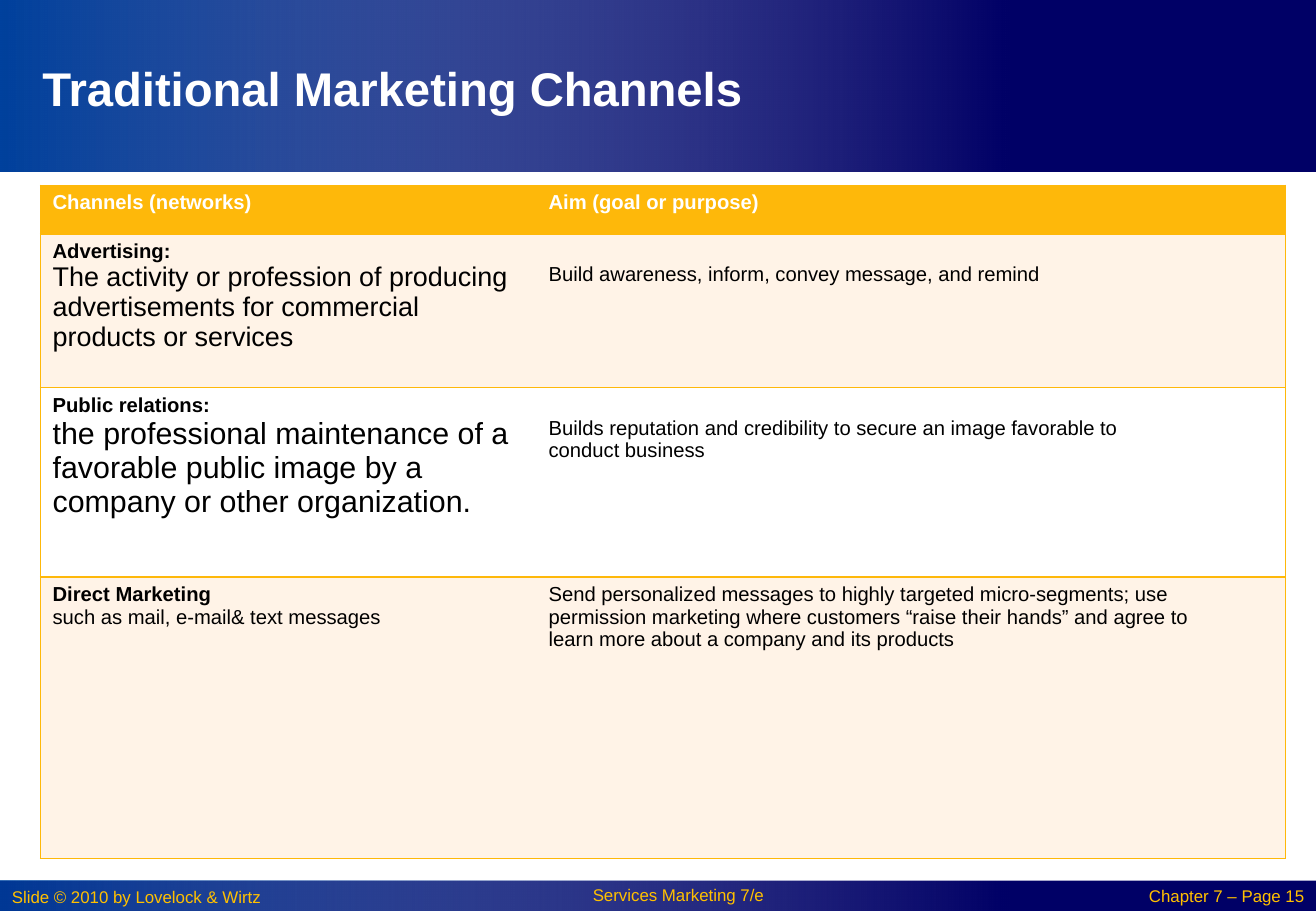
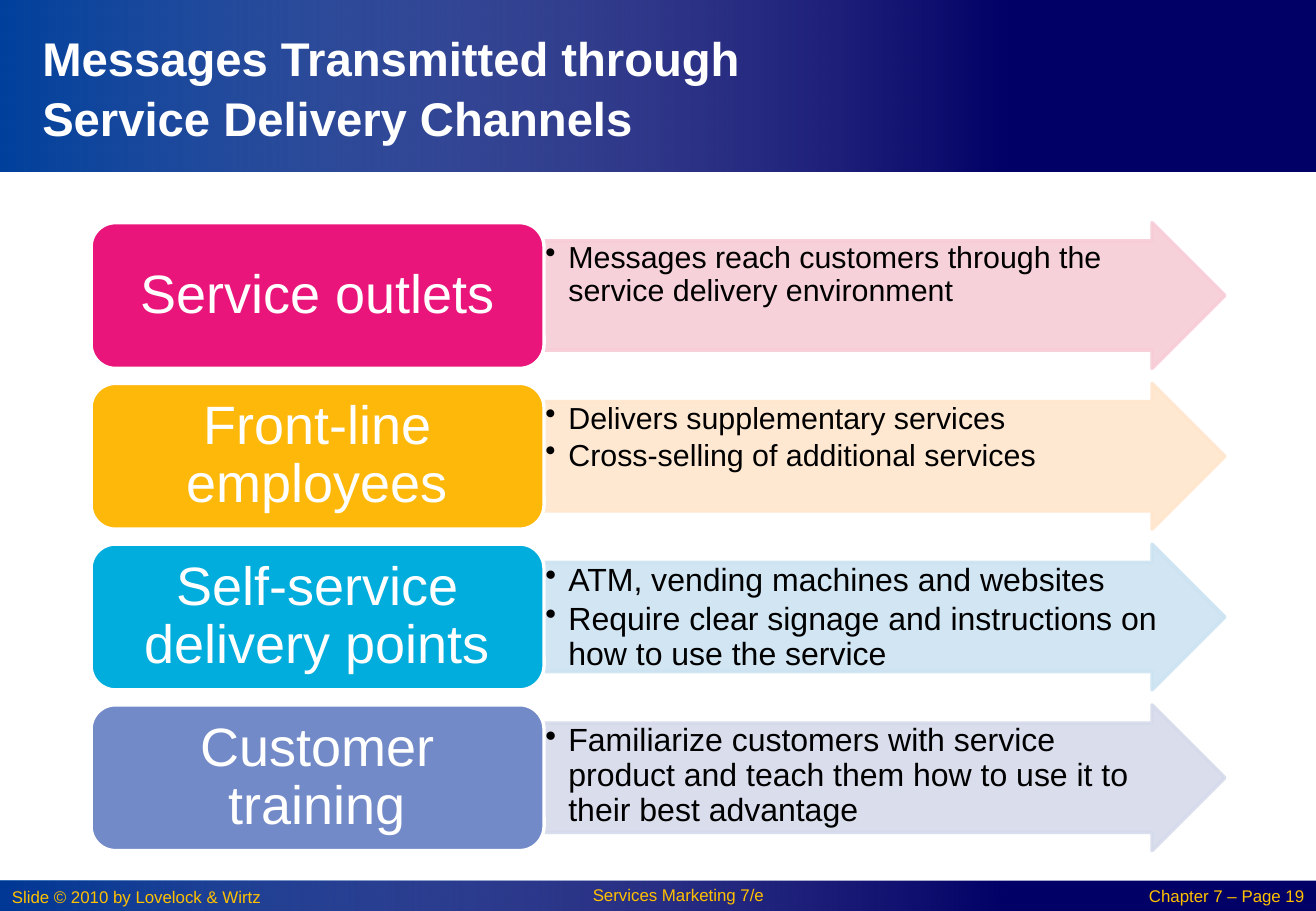
from dataclasses import dataclass

from lxml import etree
from pptx import Presentation
from pptx.dml.color import RGBColor
from pptx.enum.shapes import MSO_SHAPE
from pptx.enum.text import MSO_ANCHOR, PP_ALIGN
from pptx.oxml.ns import qn
from pptx.presentation import Presentation as Deck
from pptx.shapes.autoshape import Shape
from pptx.slide import Slide
from pptx.table import _Cell as Cell
from pptx.text.text import TextFrame
from pptx.util import Inches, Length, Pt

RECTANGLE = MSO_SHAPE.RECTANGLE
ROUNDED = MSO_SHAPE.ROUNDED_RECTANGLE
ARROW = MSO_SHAPE.RIGHT_ARROW
LEFT, CENTER, RIGHT = PP_ALIGN.LEFT, PP_ALIGN.CENTER, PP_ALIGN.RIGHT
TOP, MIDDLE = MSO_ANCHOR.TOP, MSO_ANCHOR.MIDDLE

FONT = "Arial"
NAVY, BLUE, WHITE, BLACK = "000066", "0152AB", "FFFFFF", "000000"
GOLD, FOOTER_GOLD, CREAM = "FEB80A", "FFC000", "FFF3E7"

SLIDE_COLUMNS, SLIDE_ROWS = 130, 90
GLOW_COLUMNS = 100
HEADER_ROWS, FOOTER_ROWS = 17, 3
FOOTER_TOP = SLIDE_ROWS - FOOTER_ROWS


@dataclass(frozen=True)
class Area:
    column: float
    row: float
    columns: float
    rows: float

    def lengths(self) -> list[Length]:
        return [grid(value) for value in (self.column, self.row, self.columns, self.rows)]


@dataclass(frozen=True)
class Line:
    text: str
    size: float = 12
    bold: bool = False
    color: str = BLACK
    align: PP_ALIGN = LEFT
    spacing: float = 1.0
    after: float = 0
    bullet: bool = False


@dataclass(frozen=True)
class ChannelRow:
    rows: float
    fill: str
    channel: list[Line]
    aim: Line
    aim_margin: float = 0.05


@dataclass(frozen=True)
class Message:
    label: str
    color: str
    tint: str
    size: float
    points: list[str]


TITLE_AREA = Area(3, 3, 84, 11)
TABLE_COLUMNS = (49, 66, 8)
TABLE_LEFT, TABLE_TOP = 4, 18.3
CHANNEL_ROWS = [
    ChannelRow(4.7, GOLD, [Line("Channels (networks)", bold=True, color=WHITE)],
               Line("Aim (goal or purpose)", bold=True, color=WHITE)),
    ChannelRow(15.2, CREAM, [
        Line("Advertising:", bold=True),
        Line("The activity or profession of producing advertisements for "
             "commercial products or services", 16),
    ], Line("Build awareness, inform, convey message, and remind"), 0.24),
    ChannelRow(18.7, WHITE, [
        Line("Public relations:", bold=True),
        Line("the professional maintenance of a favorable public image by a "
             "company or other organization.", 18),
    ], Line("Builds reputation and credibility to secure an image favorable to "
            "conduct business"), 0.24),
    ChannelRow(27.8, CREAM, [
        Line("Direct Marketing", bold=True),
        Line("such as mail, e-mail& text messages"),
    ], Line("Send personalized messages to highly targeted micro-segments; use "
            "permission marketing where customers “raise their hands” and agree "
            "to learn more about a company and its products")),
]

BOX_LEFT, BOX_COLUMNS, ARROW_COLUMNS = 9, 44.75, 67.25
MESSAGE_TOP, MESSAGE_ROWS, MESSAGE_PITCH = 22, 14.4, 15.88
MESSAGES = [
    Message("Service outlets", "EA157A", "F7CCD7", 18,
            ["Messages reach customers through the service delivery environment"]),
    Message("Front-line employees", GOLD, "FFE6CC", 18,
            ["Delivers supplementary services", "Cross-selling of additional services"]),
    Message("Self-service delivery points", "00ADDC", "CCE3F2", 19,
            ["ATM, vending machines and websites",
             "Require clear signage and instructions on how to use the service"]),
    Message("Customer training", "738AC8", "D5DAEB", 19,
            ["Familiarize customers with service product and teach them how to "
             "use it to their best advantage"]),
]


def grid(units: float) -> Length:
    return Inches(units / 12)


def rgb(value: str) -> RGBColor:
    return RGBColor.from_string(value)


def set_opacity(shape: Shape, *percents: int) -> None:
    for color, percent in zip(shape.element.iter(qn("a:srgbClr")), percents):
        etree.SubElement(color, qn("a:alpha"), val=str(percent * 1000))


def write(frame: TextFrame, lines: list[Line]) -> None:
    frame.word_wrap = True
    for index, line in enumerate(lines):
        paragraph = frame.add_paragraph() if index else frame.paragraphs[0]
        paragraph.text = line.text
        if line.bullet:
            properties = paragraph._p.get_or_add_pPr()
            properties.set("marL", str(Inches(0.19)))
            properties.set("indent", str(-Inches(0.19)))
            etree.SubElement(properties, qn("a:buChar"), char="•")
        paragraph.alignment = line.align
        paragraph.line_spacing = line.spacing
        paragraph.space_after = Pt(line.after)
        paragraph.font.name = FONT
        paragraph.font.size = Pt(line.size)
        paragraph.font.bold = line.bold
        paragraph.font.color.rgb = rgb(line.color)


def set_margins(frame: TextFrame, side: float, end: float) -> None:
    frame.margin_left = frame.margin_right = Inches(side)
    frame.margin_top = frame.margin_bottom = Inches(end)


def add_text(slide: Slide, area: Area, line: Line, anchor: MSO_ANCHOR = TOP) -> None:
    frame = slide.shapes.add_textbox(*area.lengths()).text_frame
    frame.vertical_anchor = anchor
    write(frame, [line])


def add_filled(slide: Slide, kind: MSO_SHAPE, area: Area, fill: str,
               outline: str | None = None) -> Shape:
    shape = slide.shapes.add_shape(kind, *area.lengths())
    shape.shadow.inherit = False
    shape.fill.solid()
    shape.fill.fore_color.rgb = rgb(fill)
    if outline:
        shape.line.color.rgb = rgb(outline)
        shape.line.width = Pt(2)
    else:
        shape.line.fill.background()
    return shape


def add_band(slide: Slide, row: float, rows: float, opacity: int) -> None:
    add_filled(slide, RECTANGLE, Area(0, row, SLIDE_COLUMNS, rows), NAVY)
    glow = add_filled(slide, RECTANGLE, Area(0, row, GLOW_COLUMNS, rows), BLUE)
    glow.fill.gradient()
    glow.fill.gradient_angle = 0
    for stop, color, position in zip(glow.fill.gradient_stops, (BLUE, WHITE), (0, 1)):
        stop.color.rgb = rgb(color)
        stop.position = position
    set_opacity(glow, opacity, 0)


def add_framed_slide(presentation: Deck, title: str, page: int) -> Slide:
    slide = presentation.slides.add_slide(presentation.slide_layouts[6])
    add_band(slide, FOOTER_TOP, FOOTER_ROWS, 69)
    add_band(slide, 0, HEADER_ROWS, 80)
    footers = [
        (Area(0, FOOTER_TOP, 31, 3.3), "Slide © 2010 by Lovelock & Wirtz", LEFT, 1.0),
        (Area(51, FOOTER_TOP, 32, 3), "Services Marketing 7/e", CENTER, 0.9),
        (Area(109, FOOTER_TOP + 0.1, 21, 3), f"Chapter 7 – Page {page}", RIGHT, 0.9),
    ]
    for area, text, align, spacing in footers:
        add_text(slide, area, Line(text, 10, color=FOOTER_GOLD, align=align, spacing=spacing))
    add_text(slide, TITLE_AREA, Line(title, 28, True, WHITE, spacing=1.05), MIDDLE)
    return slide


def set_borders(cell: Cell, visible: set[str]) -> None:
    properties = cell._tc.get_or_add_tcPr()
    for index, side in enumerate(("lnL", "lnR", "lnT", "lnB")):
        border = etree.Element(qn(f"a:{side}"), w=str(Pt(1)))
        if side in visible:
            fill = etree.SubElement(border, qn("a:solidFill"))
            etree.SubElement(fill, qn("a:srgbClr"), val=GOLD)
        else:
            etree.SubElement(border, qn("a:noFill"))
        properties.insert(index, border)


def add_channel_table(slide: Slide) -> None:
    area = Area(TABLE_LEFT, TABLE_TOP, sum(TABLE_COLUMNS),
                sum(row.rows for row in CHANNEL_ROWS))
    table = slide.shapes.add_table(
        len(CHANNEL_ROWS), len(TABLE_COLUMNS), *area.lengths()).table
    table.first_row = table.horz_banding = False
    for column, columns in zip(table.columns, TABLE_COLUMNS):
        column.width = grid(columns)
    outer_sides = ({"lnL"}, set(), {"lnR"})
    for index, row in enumerate(CHANNEL_ROWS):
        table.rows[index].height = grid(row.rows)
        cells = list(table.rows[index].cells)
        for cell, sides in zip(cells, outer_sides):
            cell.fill.solid()
            cell.fill.fore_color.rgb = rgb(row.fill)
            set_borders(cell, sides | {"lnT", "lnB"})
        write(cells[0].text_frame, row.channel)
        write(cells[1].text_frame, [row.aim])
        cells[1].margin_top = Inches(row.aim_margin)


def add_message(slide: Slide, message: Message, row: float) -> None:
    arrow = add_filled(slide, ARROW,
                       Area(BOX_LEFT + BOX_COLUMNS, row, ARROW_COLUMNS, MESSAGE_ROWS),
                       message.tint, message.tint)
    arrow.adjustments[0], arrow.adjustments[1] = 0.75, 0.5
    set_opacity(arrow, 90, 90)
    set_margins(arrow.text_frame, 0.01, 0.01)
    arrow.text_frame.vertical_anchor = TOP
    write(arrow.text_frame, [
        Line(point, message.size, spacing=0.9, after=2.7, bullet=True)
        for point in message.points])
    box = add_filled(slide, ROUNDED, Area(BOX_LEFT, row, BOX_COLUMNS, MESSAGE_ROWS),
                     message.color, WHITE)
    set_margins(box.text_frame, 0.13, 0.07)
    box.text_frame.vertical_anchor = MIDDLE
    write(box.text_frame, [Line(message.label, 32, color=WHITE, align=CENTER, spacing=0.9)])


def main() -> None:
    presentation = Presentation()
    presentation.slide_width = grid(SLIDE_COLUMNS)
    presentation.slide_height = grid(SLIDE_ROWS)
    add_channel_table(add_framed_slide(presentation, "Traditional Marketing Channels", 15))
    delivery = add_framed_slide(
        presentation, "Messages Transmitted through\vService Delivery Channels", 19)
    for index, message in enumerate(MESSAGES):
        add_message(delivery, message, MESSAGE_TOP + index * MESSAGE_PITCH)
    presentation.save("out.pptx")


if __name__ == "__main__":
    main()
